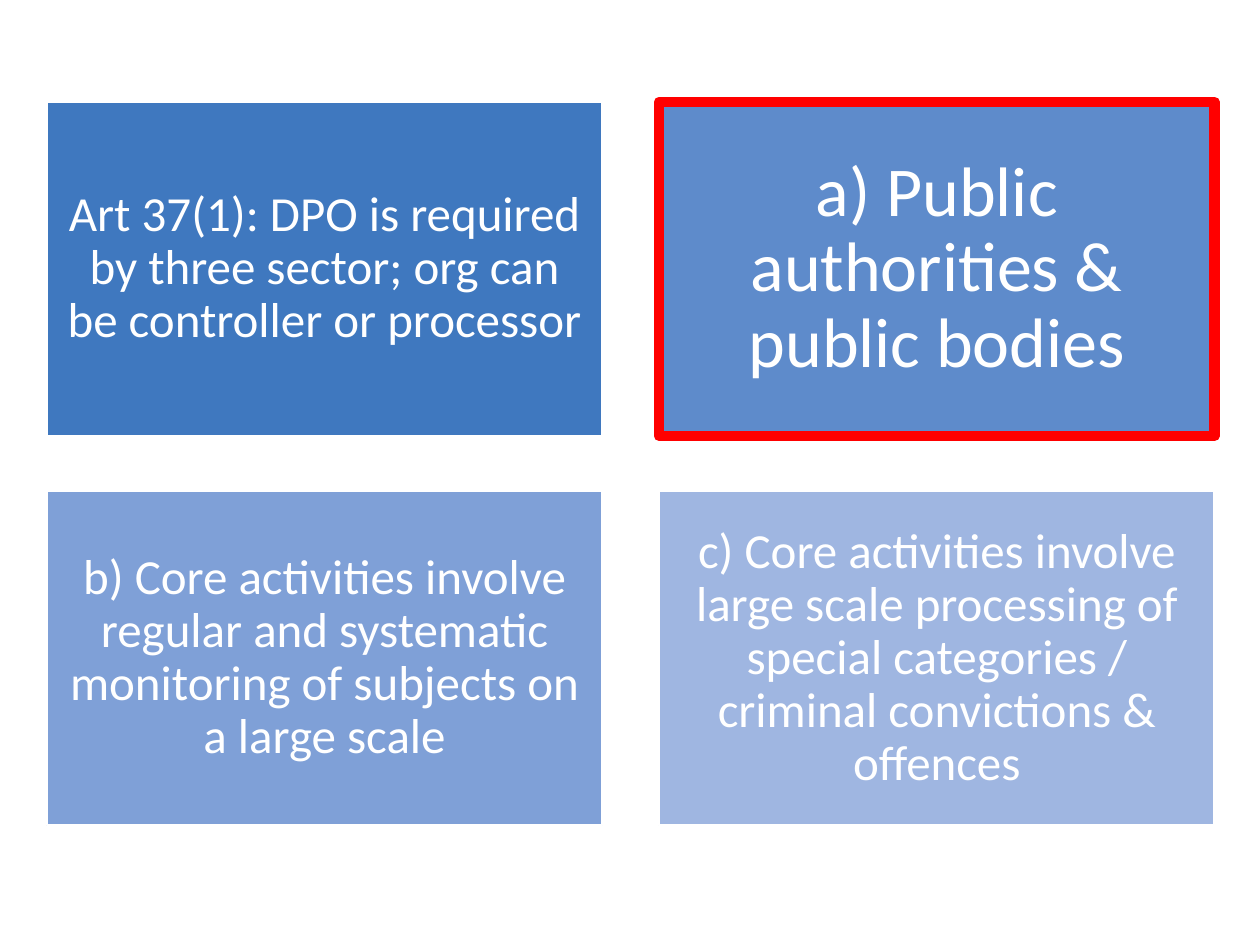
from pptx import Presentation
from pptx.dml.color import RGBColor
from pptx.enum.shapes import MSO_SHAPE as Shape
from pptx.enum.text import MSO_ANCHOR as Anchor, PP_ALIGN as Align
from pptx.util import Inches, Pt

# text, fill, line colour, line width, text size, inset
CARDS = [
    ("Art 37(1): DPO is required by three sector; org can be controller or processor",
     "3F78BF", "FFFFFF", 1.25, 28, 0.12),
    ("a) Public authorities & public bodies",
     "5E8BCB", "FF0000", 6, 40, 0.17),
    ("b) Core activities involve regular and systematic monitoring of subjects on a large scale",
     "7FA0D7", "FFFFFF", 1.25, 28, 0.12),
    ("c) Core activities involve large scale processing of special categories / "
     "criminal convictions & offences",
     "9FB6E1", "FFFFFF", 1.25, 28, 0.12),
]
COLS = 2
LEFT, TOP = 0.37, 0.81
WIDTH, HEIGHT = 4.41, 2.65
GAP_X, GAP_Y = 0.45, 0.44


def paint(target, color):
    target.rgb = RGBColor.from_string(color)


def add_card(slide, x, y, text, fill, edge, weight, size, inset):
    card = slide.shapes.add_shape(
        Shape.RECTANGLE, Inches(x), Inches(y), Inches(WIDTH), Inches(HEIGHT))
    card.shadow.inherit = False
    card.fill.solid()
    paint(card.fill.fore_color, fill)
    card.line.fill.solid()
    paint(card.line.color, edge)
    card.line.width = Pt(weight)

    frame = card.text_frame
    frame.word_wrap = True
    frame.vertical_anchor = Anchor.MIDDLE
    frame.margin_left = frame.margin_right = Inches(inset)
    frame.margin_top = frame.margin_bottom = Inches(inset)
    para = frame.paragraphs[0]
    para.alignment = Align.CENTER
    para.line_spacing = 0.9
    run = para.add_run()
    run.text = text
    run.font.name = "Calibri"
    run.font.size = Pt(size)
    paint(run.font.color, "FFFFFF")


def main():
    deck = Presentation()
    deck.slide_width, deck.slide_height = Inches(10), Inches(7.5)
    slide = deck.slides.add_slide(deck.slide_layouts[6])
    for i, card in enumerate(CARDS):
        row, col = divmod(i, COLS)
        add_card(slide, LEFT + col * (WIDTH + GAP_X),
                 TOP + row * (HEIGHT + GAP_Y), *card)
    deck.save("out.pptx")


if __name__ == "__main__":
    main()
